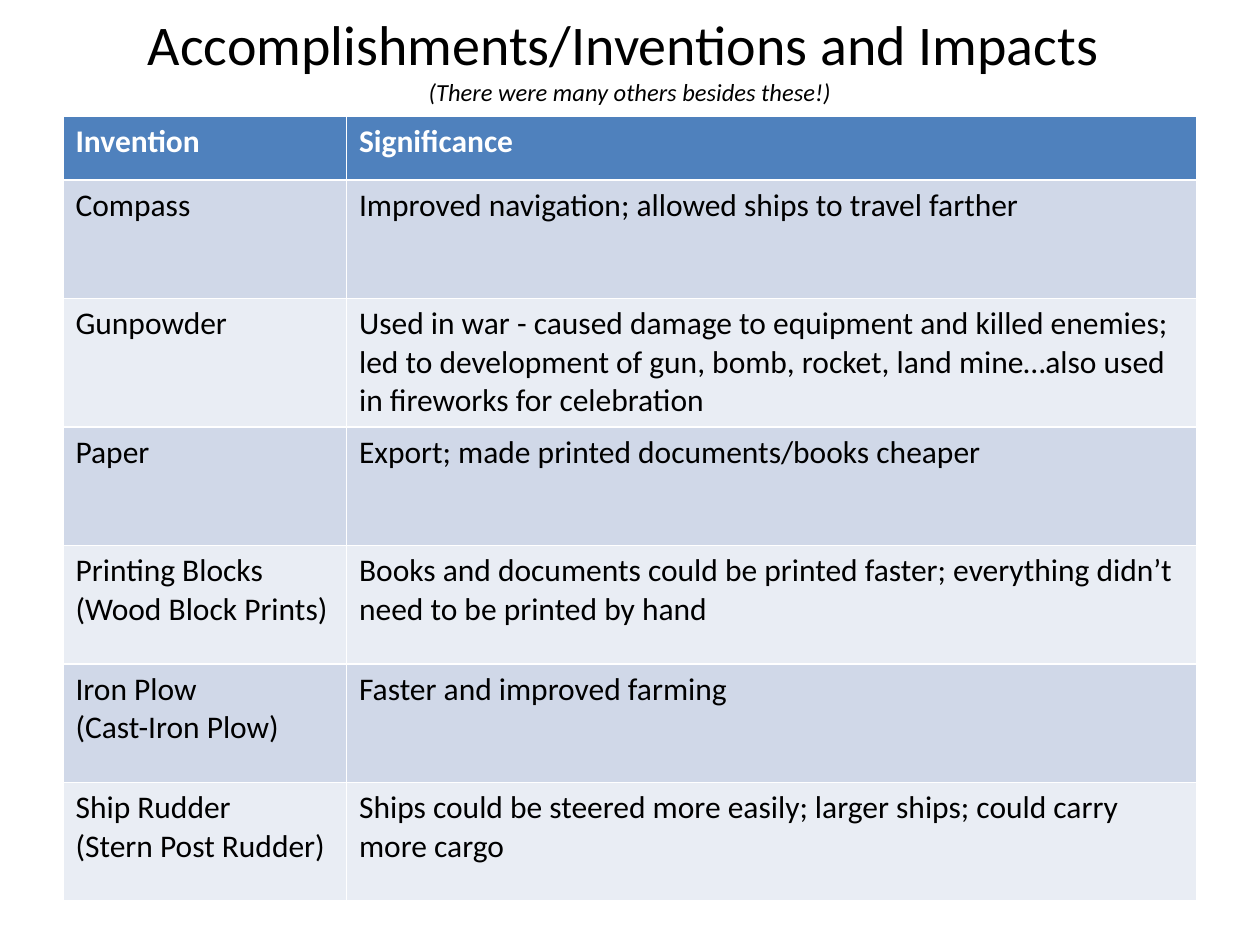
from dataclasses import dataclass

from pptx import Presentation
from pptx.dml.color import RGBColor
from pptx.enum import text as t
from pptx.util import Inches, Pt

FONT = "Calibri"
BLACK, WHITE = "000000", "FFFFFF"
HEADER_FILL = "4F81BD"
BAND_FILLS = ("D0D8E8", "E9EDF4")
COLUMN_WIDTHS = (2.25, 6.75)
HEADER_HEIGHT, ROW_HEIGHT = 0.51, 0.94


@dataclass(frozen=True)
class Invention:
    name: str
    significance: str
    height: float = ROW_HEIGHT


INVENTIONS = (
    Invention("Compass", "Improved navigation; allowed ships to travel farther"),
    Invention(
        "Gunpowder",
        "Used in war - caused damage to equipment and killed enemies; led to "
        "development of gun, bomb, rocket, land mine…also used in fireworks "
        "for celebration",
        height=1.02,
    ),
    Invention("Paper", "Export; made printed documents/books cheaper"),
    Invention(
        "Printing Blocks (Wood Block Prints)",
        "Books and documents could be printed faster; everything didn’t need "
        "to be printed by hand",
    ),
    Invention("Iron Plow\n(Cast-Iron Plow)", "Faster and improved farming"),
    Invention(
        "Ship Rudder\n(Stern Post Rudder)",
        "Ships could be steered more easily; larger ships; could carry more cargo",
    ),
)


def rgb(value: str) -> RGBColor:
    return RGBColor.from_string(value)


def add_text(paragraph, content: str, *, size: float, color: str = BLACK,
             bold: bool = False, italic: bool = False) -> None:
    run = paragraph.add_run()
    run.text = content
    font = run.font
    font.name, font.size = FONT, Pt(size)
    font.bold, font.italic = bold, italic
    font.color.rgb = rgb(color)


def add_title(slide) -> None:
    box = slide.shapes.add_textbox(Inches(0.5), Inches(0.08), Inches(9), Inches(0.76))
    frame = box.text_frame
    frame.word_wrap = True
    frame.vertical_anchor = t.MSO_ANCHOR.MIDDLE
    paragraph = frame.paragraphs[0]
    paragraph.alignment = t.PP_ALIGN.CENTER
    add_text(paragraph, "Accomplishments/Inventions and Impacts ", size=32)
    paragraph.add_line_break()
    add_text(paragraph, "(There were many others besides these!)", size=14, italic=True)


def fill_row(table, index: int, row: Invention, fill: str, *,
             color: str = BLACK, bold: bool = False) -> None:
    table.rows[index].height = Inches(row.height)
    for column, content in enumerate((row.name, row.significance)):
        cell = table.cell(index, column)
        cell.fill.solid()
        cell.fill.fore_color.rgb = rgb(fill)
        frame = cell.text_frame
        for number, line in enumerate(content.split("\n")):
            paragraph = frame.add_paragraph() if number else frame.paragraphs[0]
            add_text(paragraph, line, size=18, color=color, bold=bold)


def add_inventions_table(slide) -> None:
    height = HEADER_HEIGHT + sum(row.height for row in INVENTIONS)
    table = slide.shapes.add_table(
        len(INVENTIONS) + 1, len(COLUMN_WIDTHS), Inches(0.5), Inches(0.92),
        Inches(sum(COLUMN_WIDTHS)), Inches(height),
    ).table
    for column, width in zip(table.columns, COLUMN_WIDTHS):
        column.width = Inches(width)
    header = Invention("Invention", "Significance", HEADER_HEIGHT)
    fill_row(table, 0, header, HEADER_FILL, color=WHITE, bold=True)
    for index, row in enumerate(INVENTIONS):
        fill_row(table, index + 1, row, BAND_FILLS[index % 2])


def main() -> None:
    presentation = Presentation()
    presentation.slide_width, presentation.slide_height = Inches(10), Inches(7.5)
    slide = presentation.slides.add_slide(presentation.slide_layouts[6])
    add_title(slide)
    add_inventions_table(slide)
    presentation.save("out.pptx")


if __name__ == "__main__":
    main()
